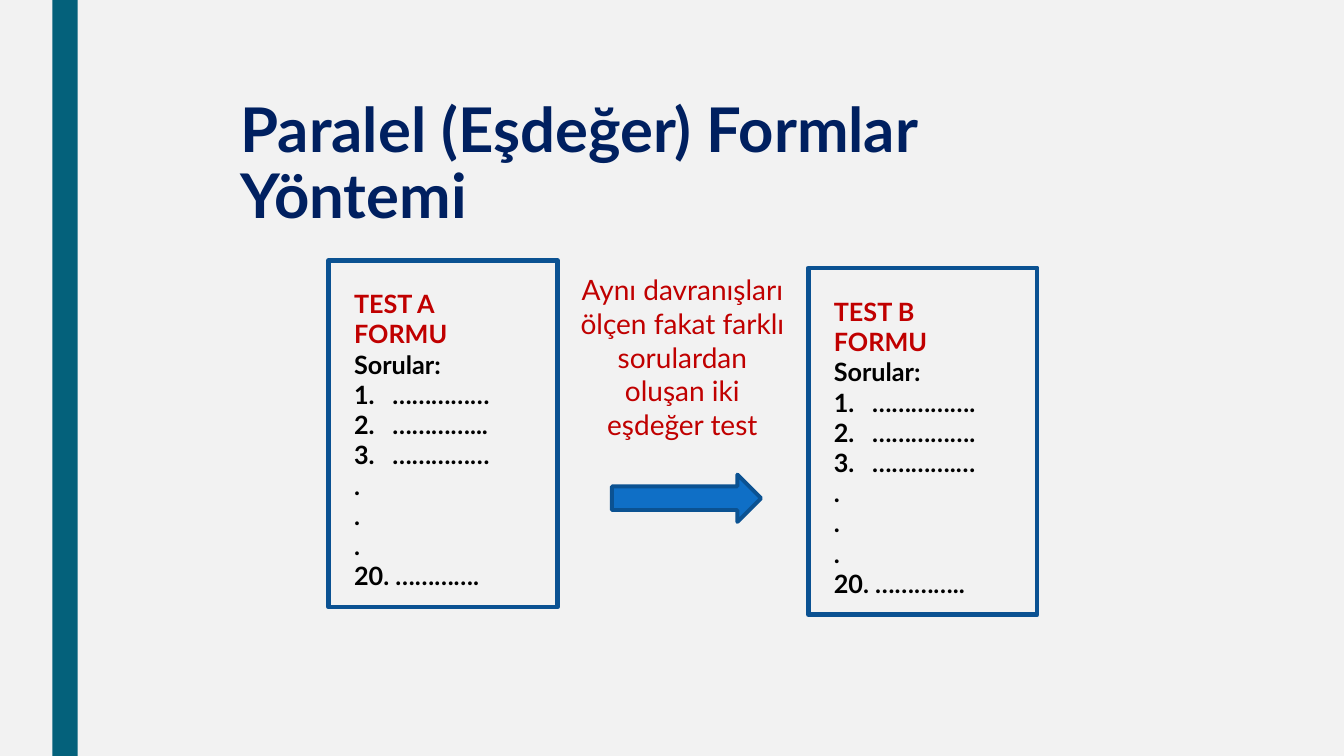
from dataclasses import dataclass
from typing import NamedTuple

from lxml import etree
from pptx import Presentation
from pptx import util as u
from pptx.dml.color import RGBColor
from pptx.enum import shapes, text
from pptx.oxml.ns import qn

COLUMNS, ROWS = 160, 90
SLIDE_WIDTH, SLIDE_HEIGHT = u.Inches(40 / 3), u.Inches(7.5)
FONT = "Lato"
RED, BLACK, NAVY = "C00000", "000000", "002060"
TEAL, BLUE, DARK_BLUE, PALE = "04617B", "0F6FC6", "0B5292", "F2F2F2"
HANGING = u.Inches(0.38)


class Area(NamedTuple):
    column: float
    row: float
    columns: float
    rows: float

    def emu(self) -> tuple:
        across, down = SLIDE_WIDTH / COLUMNS, SLIDE_HEIGHT / ROWS
        return (
            round(self.column * across),
            round(self.row * down),
            round(self.columns * across),
            round(self.rows * down),
        )


@dataclass
class TestForm:
    heading: str
    column: float
    row: float
    questions: tuple
    last_question: str


FORMS = (
    TestForm("TEST A FORMU", 39.12, 31, ("……………", "…………...", "……………"), "20. …………."),
    TestForm("TEST B FORMU", 96.24, 31.9, ("…………….", "…………….", "………….…"), "20. ………….."),
)


def colour(code: str) -> RGBColor:
    return RGBColor.from_string(code)


def draw_shape(slide, kind, area: Area, fill=None, line=None, weight=0):
    shape = slide.shapes.add_shape(kind, *area.emu())
    shape.shadow.inherit = False
    if fill:
        shape.fill.solid()
        shape.fill.fore_color.rgb = colour(fill)
    else:
        shape.fill.background()
    if line:
        shape.line.color.rgb = colour(line)
        shape.line.width = u.Pt(weight)
    else:
        shape.line.fill.background()


def text_frame(slide, area: Area, grows: bool = True):
    frame = slide.shapes.add_textbox(*area.emu()).text_frame
    frame.word_wrap = True
    if grows:
        frame.auto_size = text.MSO_AUTO_SIZE.SHAPE_TO_FIT_TEXT
    return frame


def write(frame, words: str, *, size=18, color=BLACK, bold=True, align=None,
          spacing=None, hanging=False, numbered=False) -> None:
    started = bool(frame.paragraphs[0].runs)
    paragraph = frame.add_paragraph() if started else frame.paragraphs[0]
    if align is not None:
        paragraph.alignment = align
    if spacing:
        paragraph.line_spacing = spacing
    properties = paragraph._p.get_or_add_pPr()
    if hanging:
        properties.set("marL", str(HANGING))
        properties.set("indent", str(-HANGING))
    if numbered:
        etree.SubElement(properties, qn("a:buFont"), typeface="+mj-lt")
        etree.SubElement(properties, qn("a:buAutoNum"), type="arabicPeriod")
    run = paragraph.add_run()
    run.text = words
    run.font.name = FONT
    run.font.size = u.Pt(size)
    run.font.bold = bold
    run.font.color.rgb = colour(color)


def draw_form(slide, form: TestForm) -> None:
    border = Area(form.column, form.row, 27.24, 41.28)
    draw_shape(slide, shapes.MSO_SHAPE.RECTANGLE, border, line=DARK_BLUE, weight=3.25)
    content = text_frame(slide, Area(form.column + 1.85, form.row + 2.76, 23.4, 34))
    write(content, form.heading, color=RED)
    write(content, "Sorular:")
    for question in form.questions:
        write(content, question, hanging=True, numbered=True)
    for line in (".", ".", ".", form.last_question):
        write(content, line, hanging=True)


def main() -> None:
    deck = Presentation()
    deck.slide_width, deck.slide_height = SLIDE_WIDTH, SLIDE_HEIGHT
    slide = deck.slides.add_slide(deck.slide_layouts[6])
    slide.background.fill.solid()
    slide.background.fill.fore_color.rgb = colour(PALE)

    draw_shape(slide, shapes.MSO_SHAPE.RECTANGLE, Area(6.24, 0, 3, ROWS), fill=TEAL)
    for form in FORMS:
        draw_form(slide, form)
    draw_shape(slide, shapes.MSO_SHAPE.RIGHT_ARROW, Area(72.84, 56.5, 17.76, 5.64),
               fill=BLUE, line=DARK_BLUE, weight=2.75)

    explanation = text_frame(slide, Area(67.2, 31.9, 28.08, 21.36))
    write(explanation,
          "Aynı davranışları ölçen fakat farklı sorulardan oluşan iki eşdeğer test",
          size=20, color=RED, bold=False, align=text.PP_ALIGN.CENTER)

    title = text_frame(slide, Area(27.48, 11.28, 108, 15), grows=False)
    write(title, "Paralel (Eşdeğer) Formlar Yöntemi", size=44, color=NAVY, spacing=0.89)

    deck.save("out.pptx")


if __name__ == "__main__":
    main()
